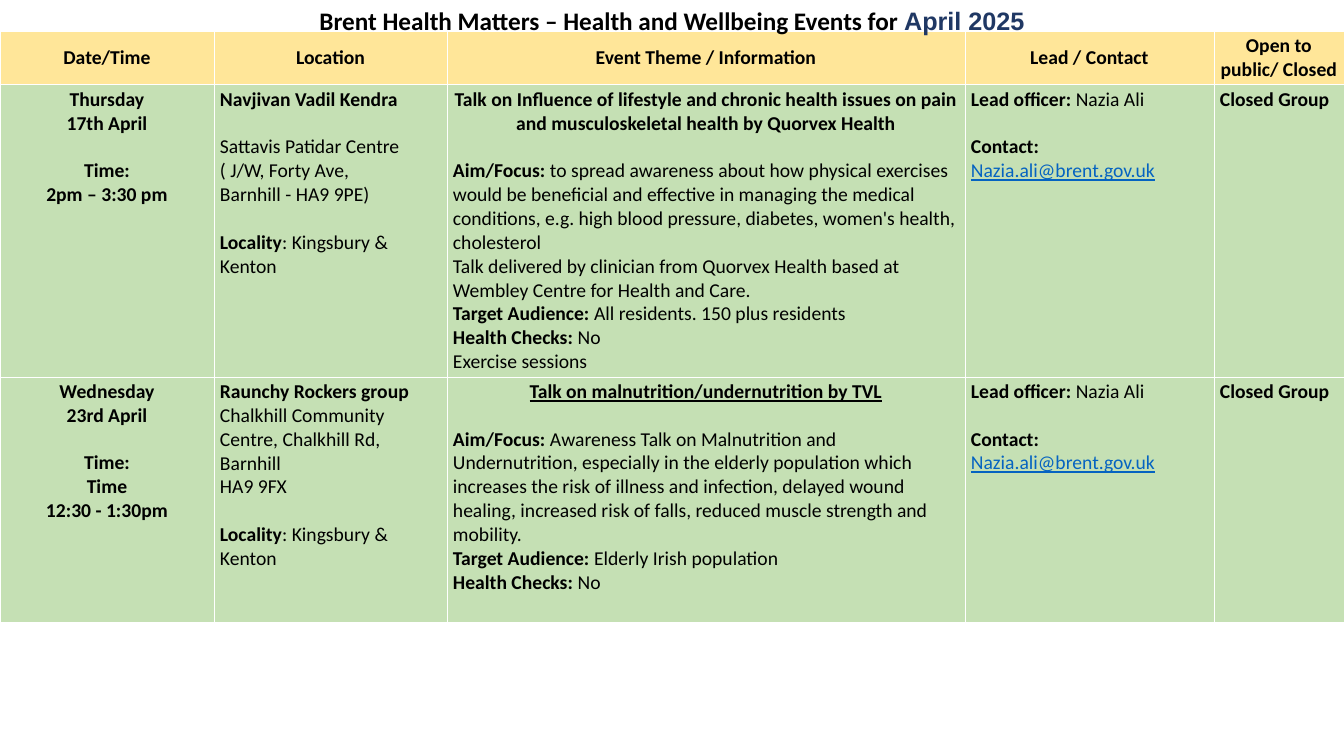
"""Build the April 2025 health and wellbeing events slide."""
from dataclasses import dataclass

from lxml import etree
from pptx import Presentation
from pptx import util as u
from pptx.dml.color import RGBColor
from pptx.enum import text
from pptx.oxml import ns


@dataclass(frozen=True)
class Theme:
    body_font: str = "Calibri"
    month_font: str = "Arial"
    ink: str = "000000"
    month: str = "203864"
    link: str = "0563C1"
    header: str = "FFE699"
    event: str = "C5E0B4"
    border: str = "FFFFFF"
    title_size: int = 18
    body_size: int = 14
    gap: int = 17
    border_width: float = 0.5


@dataclass(frozen=True)
class Line:
    bold: str = ""
    plain: str = ""
    link: str = ""
    gap: bool = False
    centred: bool = False
    underlined: bool = False


THEME = Theme()
TITLE = ("Brent Health Matters – Health and Wellbeing Events for ", "April 2025")
HEADERS = ("Date/Time", "Location", "Event Theme / Information",
           "Lead / Contact", "Open to public/ Closed")
LOCALITY = Line("Locality", ": Kingsbury & Kenton", gap=True)
CONTACT = (
    Line("Lead officer: ", "Nazia Ali"),
    Line("Contact:", gap=True),
    Line(link="Nazia.ali@brent.gov.uk"),
)
CLOSED = (Line("Closed Group"),)
EVENTS = (
    (
        (
            Line("Thursday", centred=True),
            Line("17th April", centred=True),
            Line("Time:", gap=True, centred=True),
            Line("2pm – 3:30 pm", centred=True),
        ),
        (
            Line("Navjivan Vadil Kendra"),
            Line(plain="Sattavis Patidar Centre", gap=True),
            Line(plain="( J/W, Forty Ave,"),
            Line(plain="Barnhill - HA9 9PE)"),
            LOCALITY,
        ),
        (
            Line("Talk on Influence of lifestyle and chronic health issues on pain "
                 "and musculoskeletal health by Quorvex Health", centred=True),
            Line("Aim/Focus: ",
                 "to spread awareness about how physical exercises would be beneficial "
                 "and effective in managing the medical conditions, e.g. high blood "
                 "pressure, diabetes, women's health, cholesterol", gap=True),
            Line(plain="Talk delivered by clinician from Quorvex Health based at "
                       "Wembley Centre for Health and Care."),
            Line("Target Audience: ", "All residents. 150 plus residents"),
            Line("Health Checks: ", "No"),
            Line(plain="Exercise sessions"),
        ),
        CONTACT,
        CLOSED,
    ),
    (
        (
            Line("Wednesday", centred=True),
            Line("23rd April", centred=True),
            Line("Time:", gap=True, centred=True),
            Line("Time", centred=True),
            Line("12:30 - 1:30pm", centred=True),
        ),
        (
            Line("Raunchy Rockers group"),
            Line(plain="Chalkhill Community"),
            Line(plain="Centre, Chalkhill Rd, Barnhill"),
            Line(plain="HA9 9FX"),
            LOCALITY,
        ),
        (
            Line("Talk on malnutrition/undernutrition by TVL",
                 centred=True, underlined=True),
            Line("Aim/Focus: ",
                 "Awareness Talk on Malnutrition and Undernutrition, especially in the "
                 "elderly population which increases the risk of illness and infection, "
                 "delayed wound healing, increased risk of falls, reduced muscle "
                 "strength and mobility.", gap=True),
            Line("Target Audience: ", "Elderly Irish population"),
            Line("Health Checks: ", "No"),
        ),
        CONTACT,
        CLOSED,
    ),
)
PAGE_WIDTH, PAGE_HEIGHT = 1344, 756
TITLE_HEIGHT, TABLE_TOP = 61, 31
COLUMN_WIDTHS = (214, 233, 518, 249, 130)
ROW_HEIGHTS = (53, 292, 245)
MARGIN_X, MARGIN_Y = 6, 3


def px(length):
    return u.Emu(round(length * 914400 / 100.8))


def add_span(para, words, size=THEME.body_size, font=THEME.body_font,
             colour=THEME.ink, bold=False, underlined=False):
    span = para.add_run()
    span.text = words
    span.font.size = u.Pt(size)
    span.font.name = font
    span.font.bold = bold
    span.font.underline = underlined
    span.font.color.rgb = RGBColor.from_string(colour)


def add_borders(cell):
    properties = cell._tc.get_or_add_tcPr()
    for index, side in enumerate(("lnL", "lnR", "lnT", "lnB")):
        line = etree.Element(ns.qn(f"a:{side}"), w=str(u.Pt(THEME.border_width)))
        fill = etree.SubElement(line, ns.qn("a:solidFill"))
        etree.SubElement(fill, ns.qn("a:srgbClr"), val=THEME.border)
        properties.insert(index, line)


def fill_cell(cell, lines, colour, anchor):
    cell.fill.solid()
    cell.fill.fore_color.rgb = RGBColor.from_string(colour)
    cell.vertical_anchor = anchor
    cell.margin_left = cell.margin_right = px(MARGIN_X)
    cell.margin_top = cell.margin_bottom = px(MARGIN_Y)
    add_borders(cell)
    frame = cell.text_frame
    for index, line in enumerate(lines):
        para = frame.add_paragraph() if index else frame.paragraphs[0]
        para.alignment = text.PP_ALIGN.CENTER if line.centred else text.PP_ALIGN.LEFT
        if line.gap:
            para.space_before = u.Pt(THEME.gap)
        if line.bold:
            add_span(para, line.bold, bold=True, underlined=line.underlined)
        if line.plain:
            add_span(para, line.plain)
        if line.link:
            add_span(para, line.link, colour=THEME.link, underlined=True)


def add_events(page):
    frame = page.shapes.add_table(
        len(ROW_HEIGHTS), len(COLUMN_WIDTHS), 0, px(TABLE_TOP),
        px(sum(COLUMN_WIDTHS)), px(sum(ROW_HEIGHTS)))
    table = frame.table
    for column, width in zip(table.columns, COLUMN_WIDTHS):
        column.width = px(width)
    for row, height in zip(table.rows, ROW_HEIGHTS):
        row.height = px(height)
    headings = tuple((Line(name, centred=True),) for name in HEADERS)
    for row, cells in enumerate((headings, *EVENTS)):
        colour = THEME.event if row else THEME.header
        anchor = text.MSO_ANCHOR.TOP if row else text.MSO_ANCHOR.MIDDLE
        for column, lines in enumerate(cells):
            fill_cell(table.cell(row, column), lines, colour, anchor)


def add_title(page):
    box = page.shapes.add_textbox(0, 0, px(PAGE_WIDTH), px(TITLE_HEIGHT))
    box.text_frame.word_wrap = True
    para = box.text_frame.paragraphs[0]
    para.alignment = text.PP_ALIGN.CENTER
    heading, month = TITLE
    add_span(para, heading, THEME.title_size, bold=True)
    add_span(para, month, THEME.title_size, THEME.month_font, THEME.month, bold=True)


def main():
    deck = Presentation()
    deck.slide_width, deck.slide_height = px(PAGE_WIDTH), px(PAGE_HEIGHT)
    page = deck.slides.add_slide(deck.slide_layouts[6])
    add_events(page)
    add_title(page)
    deck.save("out.pptx")


if __name__ == "__main__":
    main()
